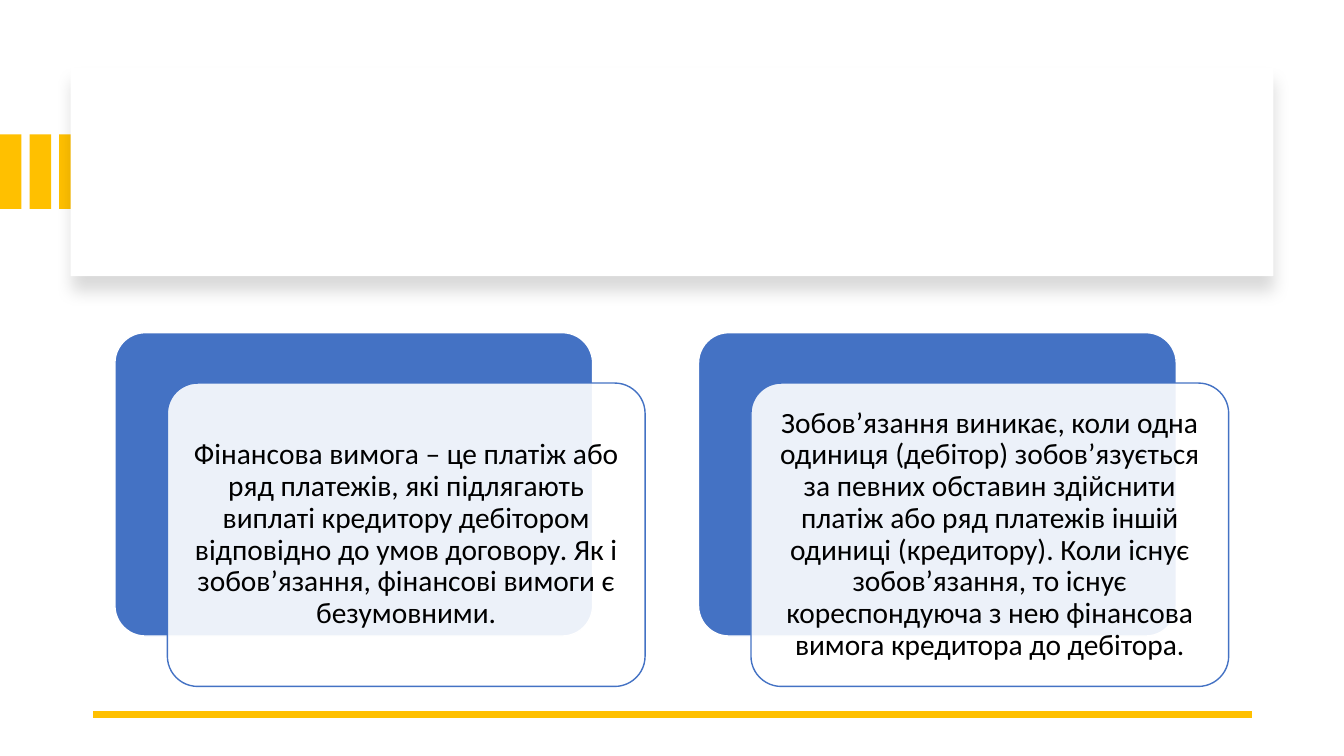
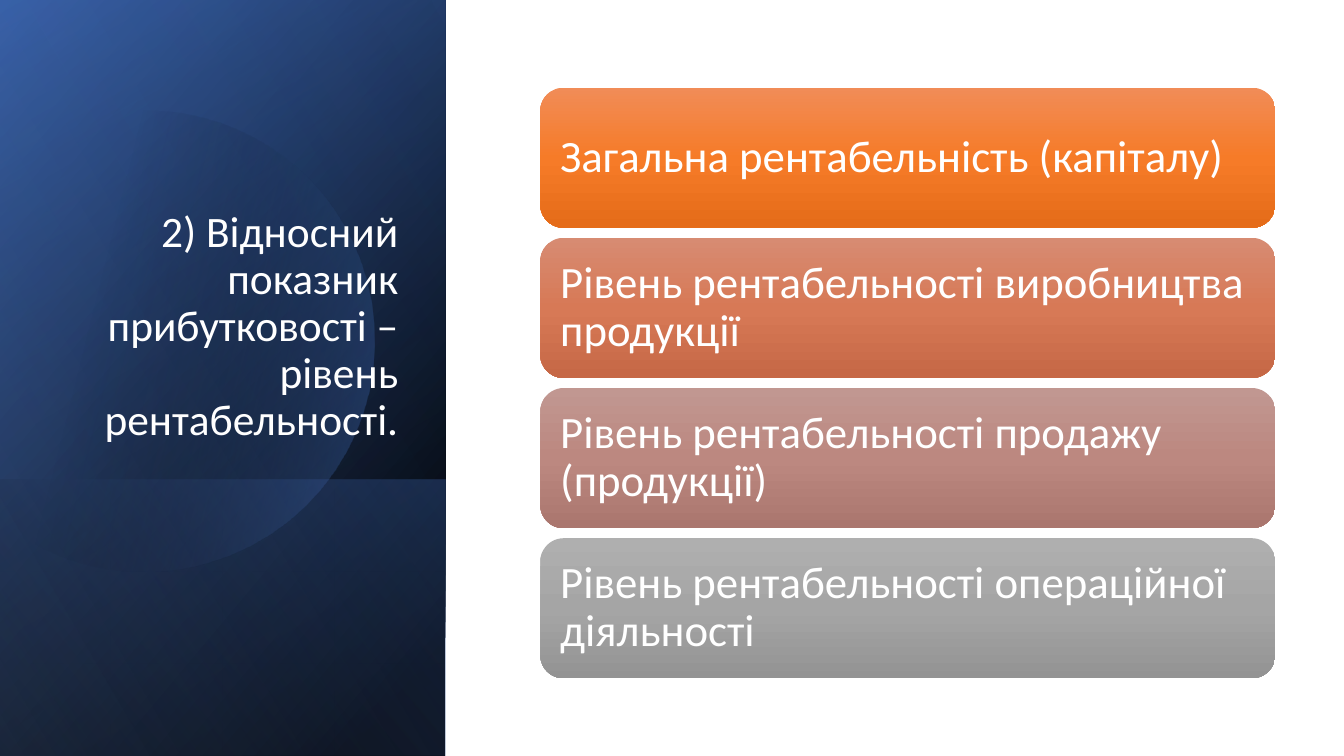
from dataclasses import dataclass

from pptx import Presentation
from pptx.dml.color import RGBColor
from pptx.enum.shapes import MSO_CONNECTOR, MSO_SHAPE
from pptx.enum.text import MSO_ANCHOR, MSO_AUTO_SIZE, PP_ALIGN
from pptx.oxml import parse_xml
from pptx.oxml.ns import nsdecls, qn
from pptx.util import Inches, Pt

RECT, ROUNDED = MSO_SHAPE.RECTANGLE, MSO_SHAPE.ROUNDED_RECTANGLE
STRAIGHT = MSO_CONNECTOR.STRAIGHT
LEFT, CENTER, RIGHT = PP_ALIGN.LEFT, PP_ALIGN.CENTER, PP_ALIGN.RIGHT
MIDDLE, BOTTOM = MSO_ANCHOR.MIDDLE, MSO_ANCHOR.BOTTOM
NO_AUTOFIT = MSO_AUTO_SIZE.NONE

FONT = "Calibri"
COLORS = {
    "white": "FFFFFF", "black": "000000", "gold": "FFC000", "blue": "4472C4",
    "deep_blue": "2F5597", "pale_blue": "8FAADC",
}
CLAIMS = [
    "Фінансова вимога – це платіж або ряд платежів, які підлягають виплаті кредитору "
    "дебітором відповідно до умов договору. Як і зобов’язання, фінансові вимоги є "
    "безумовними.",
    "Зобов’язання виникає, коли одна одиниця (дебітор) зобов’язується за певних обставин "
    "здійснити платіж або ряд платежів іншій одиниці (кредитору). Коли існує "
    "зобов’язання, то існує кореспондуюча з нею фінансова вимога кредитора до дебітора.",
]
PROFIT_TITLE = "2) Відносний показник прибутковості – рівень рентабельності."
PROFIT_LEVELS = [
    ("Загальна рентабельність (капіталу)", ("F18C57", "F67B28", "E56C19")),
    ("Рівень рентабельності виробництва продукції", ("D78B72", "D77956", "C66846")),
    ("Рівень рентабельності продажу (продукції)", ("C19791", "BC8880", "AA766E")),
    ("Рівень рентабельності операційної діяльності", ("AFAFAF", "A5A5A5", "939393")),
]
DISC_START = (33.7, 14.7)
DISC_CURVES = [
    [(55.7, 14.9), (75.8, 23.6), (82.1, 36.7)],
    [(90, 52.9), (74.2, 69.7), (46.8, 74.4)],
    [(29.6, 77.3), (12, 74.8), (0, 68.7)],
    [(0, 68.7), (0, 21.5), (0, 21.5)],
    [(5.2, 18.9), (11.3, 17.1), (18.1, 15.9)],
    [(23.3, 15.1), (28.5, 14.7), DISC_START],
]
CURVE_STEPS = 16


@dataclass
class Box:
    left: float
    top: float
    width: float
    height: float

    def point(self, x, y):
        return (int(self.left + self.width * x / 100),
                int(self.top + self.height * y / 100))

    def share(self, x, y, w, h):
        return Box(*self.point(x, y), self.width * w / 100, self.height * h / 100)

    def turned(self):
        return Box(self.left + (self.width - self.height) / 2,
                   self.top + (self.height - self.width) / 2, self.height, self.width)

    def emu(self):
        return [int(v) for v in (self.left, self.top, self.width, self.height)]


def rgb(name):
    return RGBColor.from_string(COLORS[name])


def finish_plain(shape):
    shape.shadow.inherit = False
    shape.line.fill.background()


def fill_solid(shape, color, opacity=100):
    shape.fill.solid()
    shape.fill.fore_color.rgb = rgb(color)
    if opacity < 100:
        value = shape.element.spPr.find(qn("a:solidFill"))[0]
        value.append(parse_xml(f'<a:alpha {nsdecls("a")} val="{opacity * 1000}"/>'))


def fill_gradient(shape, stops, angle):
    gradient_stops = "".join(
        f'<a:gs pos="{position * 1000}"><a:srgbClr val="{color}">'
        f'<a:alpha val="{opacity * 1000}"/></a:srgbClr></a:gs>'
        for position, color, opacity in stops)
    shape.fill.background()
    properties = shape.element.spPr
    properties.replace(properties.find(qn("a:noFill")), parse_xml(
        f'<a:gradFill {nsdecls("a")} rotWithShape="1"><a:gsLst>{gradient_stops}</a:gsLst>'
        f'<a:lin ang="{angle * 60000}" scaled="0"/></a:gradFill>'))


def add_block(slide, box, kind=RECT, color="white", opacity=100):
    block = slide.shapes.add_shape(kind, *box.emu())
    finish_plain(block)
    fill_solid(block, color, opacity)
    return block


def write(shape, text, size, color, align, anchor, inset=None):
    frame = shape.text_frame
    frame.text = text
    frame.word_wrap = True
    frame.auto_size = NO_AUTOFIT
    frame.vertical_anchor = anchor
    if inset is not None:
        frame.margin_left = frame.margin_right = Inches(inset)
        frame.margin_top = frame.margin_bottom = Inches(inset)
    paragraph = frame.paragraphs[0]
    paragraph.alignment = align
    paragraph.line_spacing = 0.9
    font = paragraph.runs[0].font
    font.name, font.size, font.color.rgb = FONT, Pt(size), rgb(color)


def draw_frame(slide, page):
    for index in range(3):
        add_block(slide, page.share(2.2 * index, 17.78, 1.6, 9.87), color="gold")
    panel = add_block(slide, page.share(5.25, 8.93, 89.5, 27.6))
    panel.element.spPr.find(qn("a:effectLst")).append(parse_xml(
        f'<a:outerShdw {nsdecls("a")} blurRad="{Pt(11)}" dist="{Pt(10)}" dir="5400000" '
        f'algn="t" rotWithShape="0"><a:srgbClr val="{COLORS["black"]}">'
        '<a:alpha val="15000"/></a:srgbClr></a:outerShdw>'))
    rule = slide.shapes.add_connector(
        STRAIGHT, *page.point(93.15, 94.53), *page.point(6.9, 94.53))
    rule.line.color.rgb = rgb("gold")
    rule.line.width = Pt(4.5)
    rule.element.spPr.append(parse_xml(f'<a:effectLst {nsdecls("a")}/>'))


def draw_claim(slide, box, text):
    layers = [((0, 0), "blue", 100, "white"), ((9.89, 14.25), "white", 90, "blue")]
    for corner, color, opacity, outline in layers:
        card = add_block(slide, box.share(*corner, 90.11, 85.75), ROUNDED, color, opacity)
        card.adjustments[0] = 0.1
        card.line.color.rgb = rgb(outline)
        card.line.width = Pt(1)
    write(card, text, 21, "black", CENTER, MIDDLE, 0.09)


def draw_sidebar_layer(slide, box, stops, angle):
    layer = add_block(slide, box.turned())
    layer.rotation = 90
    layer.element.spPr.find(qn("a:xfrm")).set("flipH", "1")
    fill_gradient(layer, stops, angle)


def curve_points(start, curves):
    for first, second, end in curves:
        for step in range(1, CURVE_STEPS + 1):
            t = step / CURVE_STEPS
            weights = ((1 - t) ** 3, 3 * t * (1 - t) ** 2, 3 * t ** 2 * (1 - t), t ** 3)
            yield [sum(w * p[axis] for w, p in zip(weights, (start, first, second, end)))
                   for axis in (0, 1)]
        start = end


def draw_disc(slide, box):
    outline = slide.shapes.build_freeform(*box.point(*DISC_START))
    outline.add_line_segments([box.point(*p) for p in curve_points(DISC_START, DISC_CURVES)])
    disc = outline.convert_to_shape()
    finish_plain(disc)
    fill_gradient(disc, [(29, COLORS["black"], 0), (100, COLORS["blue"], 43)], 14)


def draw_sidebar(slide, box, text):
    black, blue = COLORS["black"], COLORS["blue"]
    draw_sidebar_layer(slide, box, [(8, black, 100), (100, COLORS["deep_blue"], 100)], 50)
    draw_sidebar_layer(slide, box, [(0, black, 0), (99, blue, 46)], 30)
    draw_sidebar_layer(slide, box.share(0, 63.47, 100, 36.53),
                       [(2, blue, 29), (100, black, 30)], 130)
    draw_disc(slide, box)
    draw_sidebar_layer(slide, box, [(0, black, 0), (99, COLORS["pale_blue"], 11)], 120)
    title = slide.shapes.title
    title.left, title.top, title.width, title.height = box.share(
        14.48, 24.53, 77.15, 34.93).emu()
    write(title, text, 31, "white", RIGHT, BOTTOM)
    title.element.getparent().append(title.element)


def draw_levels(slide, box, levels):
    height = 23.72
    pitch = (100 - height) / (len(levels) - 1)
    for index, (text, shades) in enumerate(levels):
        level = add_block(slide, box.share(0, index * pitch, 100, height), ROUNDED)
        fill_gradient(level, [(50 * i, shade, 100) for i, shade in enumerate(shades)], 90)
        write(level, text, 32, "white", LEFT, MIDDLE, 0.13)


def build_claims_slide(deck, page):
    slide = deck.slides.add_slide(deck.slide_layouts[6])
    draw_frame(slide, page)
    claims_area = page.share(8.55, 44, 82.87, 46.8)
    for index, text in enumerate(CLAIMS):
        draw_claim(slide, claims_area.share(52.4 * index, 0, 47.6, 100), text)


def build_profit_slide(deck, page):
    slide = deck.slides.add_slide(deck.slide_layouts[5])
    draw_sidebar(slide, page.share(0, 0, 33.15, 100), PROFIT_TITLE)
    draw_levels(slide, page.share(40.2, 11.6, 54.69, 78.13), PROFIT_LEVELS)


def main():
    deck = Presentation()
    deck.slide_width, deck.slide_height = Inches(13.33), Inches(7.5)
    page = Box(0, 0, deck.slide_width, deck.slide_height)
    build_claims_slide(deck, page)
    build_profit_slide(deck, page)
    deck.save("out.pptx")


if __name__ == "__main__":
    main()
